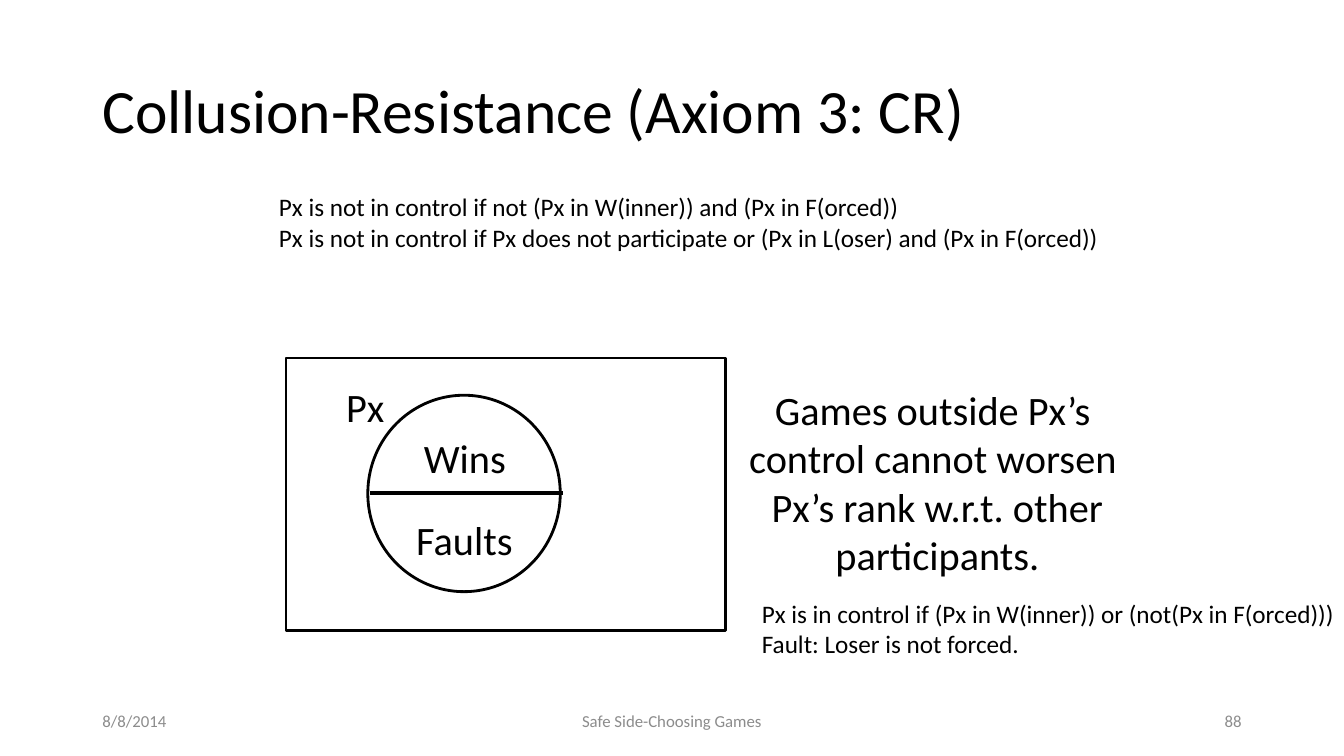
from lxml.etree import SubElement
from pptx import Presentation
from pptx.dml.color import RGBColor
from pptx.enum.shapes import MSO_CONNECTOR, MSO_SHAPE
from pptx.enum.text import MSO_ANCHOR, PP_ALIGN
from pptx.oxml.ns import qn
from pptx.util import Cm, Pt

BLACK, GREY = "000000", "8C8C8C"
LEFT, CENTER, RIGHT = PP_ALIGN.LEFT, PP_ALIGN.CENTER, PP_ALIGN.RIGHT
TOP, MIDDLE = MSO_ANCHOR.TOP, MSO_ANCHOR.MIDDLE


def color(hex_string):
    return RGBColor.from_string(hex_string)


def add_text(box, lines, size, align=LEFT, anchor=MIDDLE, wrap=True,
             inset=True, ink=BLACK, spacing=1.0):
    """Place one paragraph per line in a box given as left, top, width, height in cm."""
    frame = slide.shapes.add_textbox(*map(Cm, box)).text_frame
    side, edge = (Cm(0.25), Cm(0.13)) if inset else (0, 0)
    frame_format = {"word_wrap": wrap, "vertical_anchor": anchor,
                    "margin_left": side, "margin_right": side,
                    "margin_top": edge, "margin_bottom": edge}
    for attribute, value in frame_format.items():
        setattr(frame, attribute, value)
    frame.text = "\n".join(lines)
    for paragraph in frame.paragraphs:
        paragraph.alignment = align
        paragraph.line_spacing = spacing
        font = paragraph.runs[0].font
        font.name, font.size = "Calibri", Pt(size)
        font.color.rgb = color(ink)


presentation = Presentation()
presentation.slide_width, presentation.slide_height = Cm(33.87), Cm(19.05)
slide = presentation.slides.add_slide(presentation.slide_layouts[6])

add_text((2.33, 1.01, 29.21, 3.68), ["Collusion-Resistance (Axiom 3: CR)"], 44, spacing=0.9)

# Diagram: the games of Px, split into wins and faults
outlines = [
    (MSO_SHAPE.OVAL, (9.27, 9.96, 4.85, 4.95)),
    (MSO_SHAPE.RECTANGLE, (7.21, 9.02, 11.07, 6.86)),
]
for preset, box in outlines:
    outline = slide.shapes.add_shape(preset, *map(Cm, box))
    outline.shadow.inherit = False
    outline.fill.background()
    outline.line.color.rgb = color(BLACK)
    outline.line.width = Pt(2)

divider = slide.shapes.add_connector(
    MSO_CONNECTOR.STRAIGHT, Cm(9.32), Cm(12.42), Cm(14.2), Cm(12.42))
divider.line.color.rgb = color(BLACK)
divider.line.width = Pt(3)
SubElement(divider.line._get_or_add_ln().getparent(), qn("a:effectLst"))

diagram_labels = [
    ("Px", (8.61, 9.63, 1.19, 1.22)),
    ("Wins", (10.57, 10.92, 2.29, 1.22)),
    ("Faults", (10.31, 12.98, 2.79, 1.22)),
]
for label, box in diagram_labels:
    add_text(box, [label], 28.8, CENTER, wrap=False, inset=False)

add_text((17.63, 9.75, 11.99, 4.78),
         ["Games outside Px’s ", "control cannot worsen ",
          "Px’s rank w.r.t. other participants."],
         28.8, CENTER, inset=False)

# Definitions of control
definitions = [
    ((18.95, 14.94, 15.11, 2.57),
     ["Px is in control if (Px in W(inner)) or (not(Px in F(orced)))",
      "Fault: Loser is not forced."]),
    ((6.78, 4.7, 21.56, 2.57),
     ["Px is not in control if not (Px in W(inner)) and (Px in F(orced))",
      "Px is not in control if Px does not participate or (Px in L(oser) and (Px in F(orced))"]),
]
for box, lines in definitions:
    add_text(box, lines, 18, anchor=TOP, wrap=False)

footers = [
    ("8/8/2014", 2.33, 7.62, LEFT),
    ("Safe Side-Choosing Games", 11.22, 11.43, CENTER),
    ("88", 23.92, 7.62, RIGHT),
]
for footer, left, width, align in footers:
    add_text((left, 17.66, width, 1.01), [footer], 12, align, ink=GREY)

presentation.save("out.pptx")
